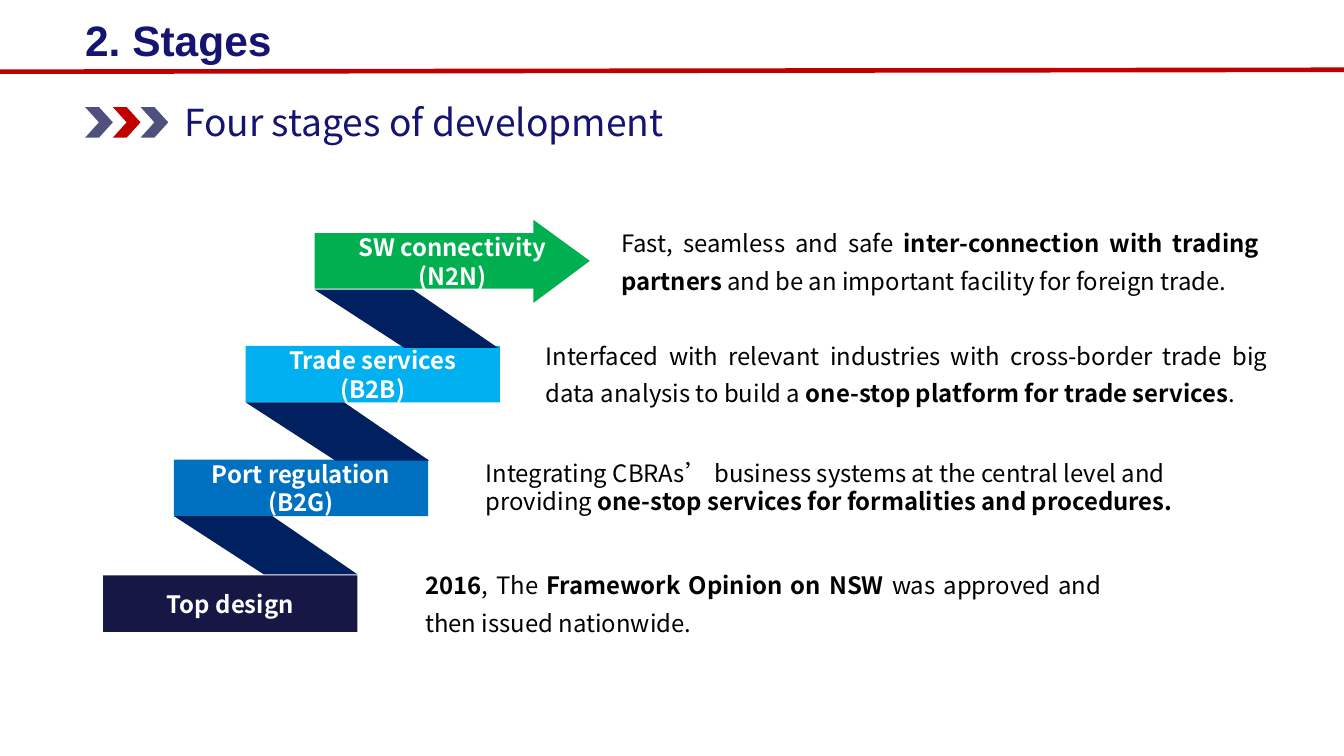
from dataclasses import dataclass

from lxml import etree
from pptx import Presentation
from pptx.dml.color import RGBColor
from pptx.enum import shapes, text
from pptx.oxml import ns
from pptx.util import Inches, Pt

NAVY = RGBColor(0x15, 0x14, 0x72)
RED = RGBColor(0xC0, 0x00, 0x00)
SLATE = RGBColor(0x50, 0x50, 0x7F)
FOLD = RGBColor(0x00, 0x20, 0x60)
GREEN = RGBColor(0x00, 0xB0, 0x50)
SKY = RGBColor(0x00, 0xB0, 0xF0)
BLUE = RGBColor(0x00, 0x70, 0xC0)
MIDNIGHT = RGBColor(0x17, 0x17, 0x45)
WHITE = RGBColor(0xFF, 0xFF, 0xFF)
BLACK = RGBColor(0x00, 0x00, 0x00)

BODY_FONT = "Noto Sans CJK SC"
STEP_WIDTH, STEP_HEIGHT = 2.66, 0.59
FOLD_OUTLINE = [(0, 0), (0.94, 0.61), (1.92, 0.61), (1.03, 0)]
ARROW_OUTLINE = [(0, 0), (2.29, 0), (2.29, -0.14), (2.88, 0.29),
                 (2.29, 0.73), (2.29, 0.58), (0, 0.58)]

Box = tuple[float, float, float, float]
Points = list[tuple[float, float]]


@dataclass
class Stage:
    label: list[str]
    left: float
    top: float
    color: RGBColor
    description: list[tuple[str, bool]]  # (words, bold)
    description_box: Box
    justified: bool = True
    is_arrow: bool = False


STAGES = [
    Stage(["Top design"], 1.08, 6.02, MIDNIGHT,
          [("2016", True), (", The ", False), ("Framework Opinion on NSW ", True),
           ("was approved and then issued nationwide.", False)],
          (4.35, 6.04, 7.27, 0.47)),
    Stage(["Port regulation", "(B2G)"], 1.82, 4.81, BLUE,
          [("Integrating CBRAs’ business systems at the central level and providing ", False),
           ("one-stop services for formalities and procedures.", True)],
          (4.98, 4.86, 7.89, 0.47), justified=False),
    Stage(["Trade services (B2B)"], 2.57, 3.62, SKY,
          [("Interfaced with relevant industries with cross-border trade big data "
            "analysis to build a ", False),
           ("one-stop platform for trade services", True), (".", False)],
          (5.61, 3.64, 7.75, 0.47)),
    Stage(["SW connectivity", "(N2N)"], 3.29, 2.44, GREEN,
          [("Fast, seamless and safe", False),
           (" inter-connection with trading partners", True),
           (" and be an important facility for foreign trade.", False)],
          (6.4, 2.46, 6.87, 0.47), is_arrow=True),
]


def set_font(paragraph, size: float, color: RGBColor, name: str = BODY_FONT) -> None:
    paragraph.font.name = name
    paragraph.font.size = Pt(size)
    paragraph.font.color.rgb = color


def paint(shape, color: RGBColor) -> None:
    shape.fill.solid()
    shape.fill.fore_color.rgb = color
    shape.line.fill.background()
    shape.shadow.inherit = False


def add_preset(slide, kind, box: Box, color: RGBColor):
    shape = slide.shapes.add_shape(kind, *map(Inches, box))
    paint(shape, color)
    return shape


def add_outline(slide, left: float, top: float, outline: Points, color: RGBColor):
    """Draw a closed polygon whose points are offsets from (left, top)."""
    points = [(Inches(left + x), Inches(top + y)) for x, y in outline]
    builder = slide.shapes.build_freeform(*points[0])
    builder.add_line_segments(points[1:], close=True)
    shape = builder.convert_to_shape()
    paint(shape, color)
    return shape


def add_text_frame(slide, box: Box):
    frame = slide.shapes.add_textbox(*map(Inches, box)).text_frame
    frame.word_wrap = True
    return frame


def add_title(slide) -> None:
    title = slide.shapes.title
    title.left, title.top, title.width, title.height = map(Inches, (0.79, 0.1, 6.95, 0.56))
    frame = title.text_frame
    frame.text = "2. Stages"
    frame.auto_size = text.MSO_AUTO_SIZE.NONE
    frame.vertical_anchor = text.MSO_ANCHOR.TOP
    paragraph = frame.paragraphs[0]
    paragraph.alignment = text.PP_ALIGN.LEFT
    set_font(paragraph, 32, NAVY, "Arial")
    paragraph.font.bold = True


def add_header_rule(slide) -> None:
    rule = slide.shapes.add_connector(shapes.MSO_CONNECTOR.STRAIGHT,
                                      *map(Inches, (0, 0.75, 14.08, 0.73)))
    rule.line.color.rgb = RED
    rule.line.width = Pt(3.5)
    etree.SubElement(rule._element.spPr, ns.qn("a:effectLst"))


def add_heading(slide) -> None:
    for index, color in enumerate([SLATE, RED, SLATE]):
        add_preset(slide, shapes.MSO_SHAPE.CHEVRON,
                   (0.89 + 0.29 * index, 1.12, 0.29, 0.32), color)
    paragraph = add_text_frame(slide, (1.83, 0.99, 9.06, 0.57)).paragraphs[0]
    paragraph.text = "Four stages of development"
    set_font(paragraph, 28, NAVY)


def add_step(slide, stage: Stage) -> None:
    if stage.is_arrow:
        shape = add_outline(slide, stage.left, stage.top, ARROW_OUTLINE, stage.color)
    else:
        shape = add_preset(slide, shapes.MSO_SHAPE.RECTANGLE,
                           (stage.left, stage.top, STEP_WIDTH, STEP_HEIGHT), stage.color)
    frame = shape.text_frame
    frame.word_wrap = True
    frame.margin_left = frame.margin_right = Inches(0.2)
    frame.vertical_anchor = text.MSO_ANCHOR.MIDDLE
    frame.text = "\n".join(stage.label)
    for paragraph in frame.paragraphs:
        paragraph.alignment = text.PP_ALIGN.CENTER
        set_font(paragraph, 18, WHITE)
        paragraph.font.bold = True


def add_description(slide, stage: Stage) -> None:
    frame = add_text_frame(slide, stage.description_box)
    frame.vertical_anchor = text.MSO_ANCHOR.MIDDLE
    paragraph = frame.paragraphs[0]
    if stage.justified:
        paragraph.alignment = text.PP_ALIGN.JUSTIFY
        paragraph.line_spacing = 1.3
    set_font(paragraph, 18, BLACK)
    for words, bold in stage.description:
        run = paragraph.add_run()
        run.text = words
        run.font.bold = bold


def main() -> None:
    presentation = Presentation()
    presentation.slide_width = Inches(14.06)
    presentation.slide_height = Inches(7.91)
    slide = presentation.slides.add_slide(presentation.slide_layouts.get_by_name("Title Only"))
    add_title(slide)
    add_header_rule(slide)
    add_heading(slide)
    for stage in STAGES:
        add_step(slide, stage)
        add_description(slide, stage)
    for stage in STAGES[1:]:
        add_outline(slide, stage.left, stage.top + STEP_HEIGHT, FOLD_OUTLINE, FOLD)
    presentation.save("out.pptx")


if __name__ == "__main__":
    main()
